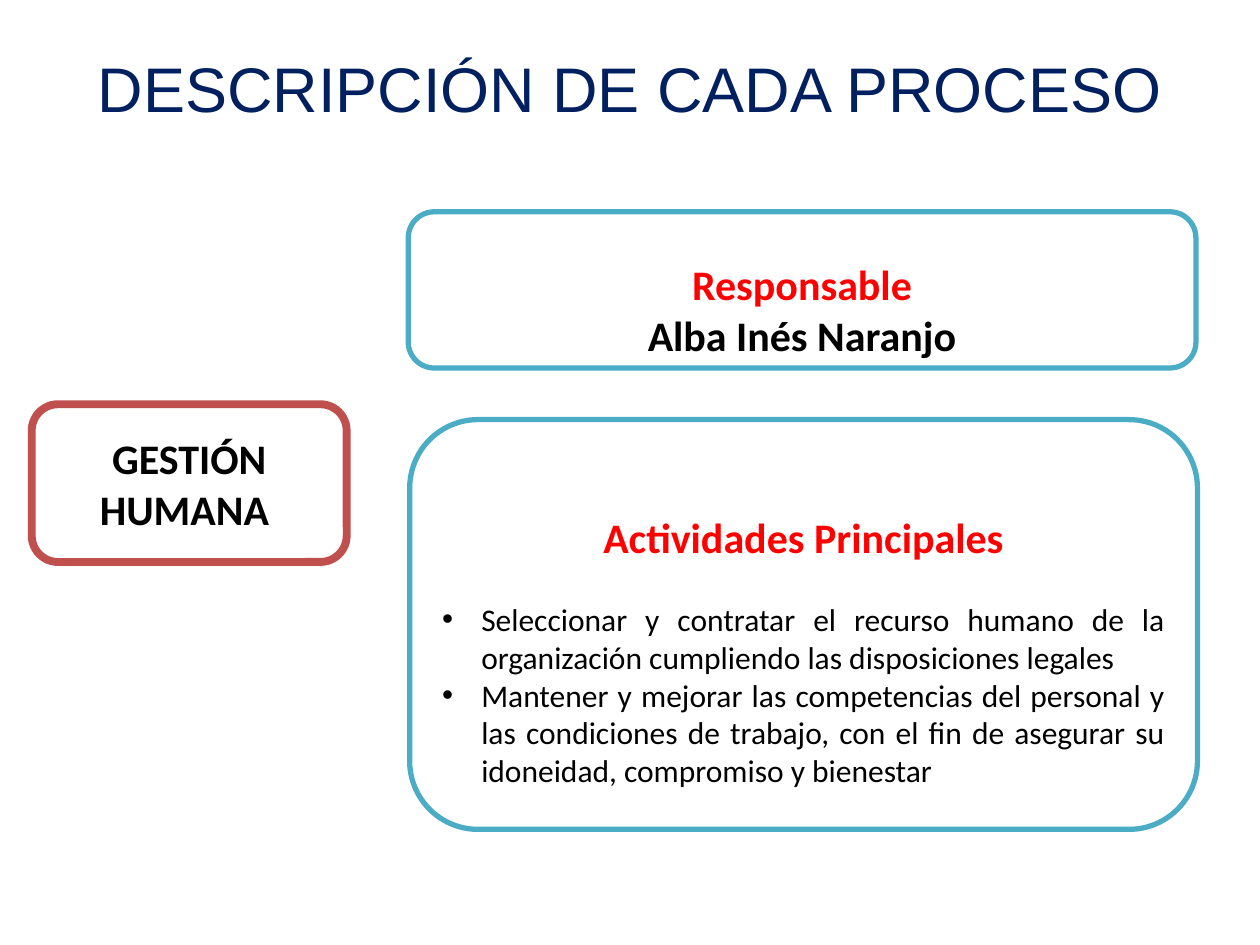
import pptx
import pptx.util
import pptx.dml.color
import pptx.enum.shapes
import pptx.enum.text
from lxml import etree

Cm, Pt = pptx.util.Cm, pptx.util.Pt
ALIGN = pptx.enum.text.PP_ALIGN
COLORS = {"title": "002060", "process": "C0504D", "detail": "4BACC6",
          "heading": "FF0000", "text": "000000", "fill": "FFFFFF"}
ACTIVITIES = [
    "Seleccionar y contratar el recurso humano de la organización "
    "cumpliendo las disposiciones legales",
    "Mantener y mejorar las competencias del personal y las condiciones de "
    "trabajo, con el fin de asegurar su idoneidad, compromiso y bienestar",
]


def rgb(name):
    return pptx.dml.color.RGBColor.from_string(COLORS[name])


def add_bullet(p, indent):
    pPr = p._p.get_or_add_pPr()
    pPr.set("marL", str(indent))
    pPr.set("indent", str(-indent))
    ns = pptx.oxml.ns.qn
    etree.SubElement(pPr, ns("a:buFont")).set("typeface", "Arial")
    etree.SubElement(pPr, ns("a:buChar")).set("char", "•")


def write(tf, text, size=24, color="text", bold=True, font="Calibri",
          align=ALIGN.CENTER, before=0, bullet=False):
    """Fill the empty first paragraph, or append a new one."""
    p = tf.paragraphs[0] if not tf.text else tf.add_paragraph()
    p.alignment = align
    p.space_before = Pt(before)
    if bullet:
        add_bullet(p, Cm(0.79))
    r = p.add_run()
    r.text = text
    r.font.name, r.font.size, r.font.bold = font, Pt(size), bold
    r.font.color.rgb = rgb(color)


def add_box(s, box, line, width, top=0.13):
    """Add a rounded box and return its text frame; top is the upper inset in cm."""
    sp = s.shapes.add_shape(pptx.enum.shapes.MSO_SHAPE.ROUNDED_RECTANGLE,
                            *map(Cm, box))
    sp.shadow.inherit = False
    sp.fill.solid()
    sp.fill.fore_color.rgb = rgb("fill")
    sp.line.color.rgb = rgb(line)
    sp.line.width = Pt(width)
    tf = sp.text_frame
    tf.word_wrap = True
    tf.vertical_anchor = pptx.enum.text.MSO_ANCHOR.MIDDLE
    tf.margin_top = Cm(top)
    return tf


def add_title(s, box):
    title = s.shapes.title
    title.left, title.top, title.width, title.height = map(Cm, box)
    tf = title.text_frame
    tf.auto_size = pptx.enum.text.MSO_AUTO_SIZE.NONE
    tf.vertical_anchor = pptx.enum.text.MSO_ANCHOR.MIDDLE
    write(tf, "DESCRIPCIÓN DE CADA PROCESO", size=36, color="title",
          bold=False, font="Arial")


def add_process(s, box):
    write(add_box(s, box, "process", 4.5), "GESTIÓN HUMANA ")


def add_responsible(s, box):
    tf = add_box(s, box, "detail", 3, top=0.9)
    write(tf, "Responsable", color="heading")
    write(tf, "Alba Inés Naranjo")


def add_activities(s, box):
    tf = add_box(s, box, "detail", 3, top=1.16)
    write(tf, "Actividades Principales", color="heading")
    for i, activity in enumerate(ACTIVITIES):
        write(tf, activity, size=18, bold=False, align=ALIGN.JUSTIFY,
              before=0 if i else 22, bullet=True)


def main():
    prs = pptx.Presentation()
    prs.slide_width, prs.slide_height = Cm(25.4), Cm(19.05)
    s = prs.slides.add_slide(prs.slide_layouts.get_by_name("Title Only"))
    add_title(s, (1.27, 0.76, 22.86, 1.98))
    add_process(s, (0.64, 8.15, 6.35, 3.18))
    add_responsible(s, (8.23, 4.27, 15.88, 3.15))
    add_activities(s, (8.26, 8.46, 15.88, 8.26))
    prs.save("out.pptx")


if __name__ == "__main__":
    main()
